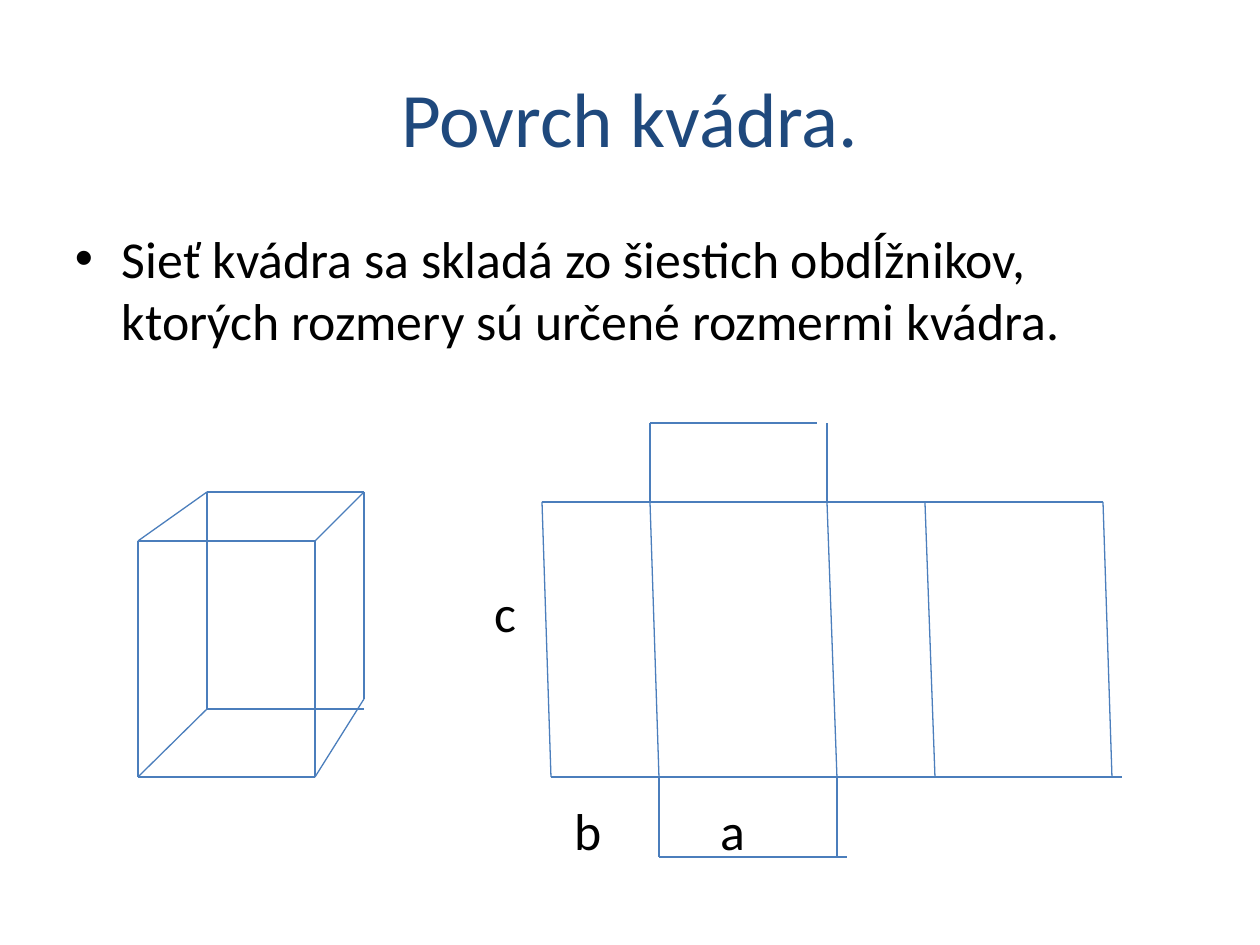
"""Build a slide on the surface of a cuboid, with the solid and its net."""
from itertools import pairwise
from pptx import Presentation
from pptx import util as u
from pptx.dml.color import RGBColor
from pptx.enum import shapes, text
from pptx.oxml.ns import qn
from lxml import etree

NAVY = RGBColor(0x1F, 0x49, 0x7D)
BLUE = RGBColor(0x4B, 0x7E, 0xBC)
BLACK = RGBColor(0, 0, 0)
FONT = "Calibri"
SIZE = 29.6

TITLE = "Povrch kvádra."
BODY = ("Sieť kvádra sa skladá zo šiestich obdĺžnikov, "
        "ktorých rozmery sú určené rozmermi kvádra.")
LABELS = [("c", 495, 581), ("b", 575, 799), ("a", 721, 799)]

SOLID = [
    [(138, 777), (315, 777), (315, 541), (138, 541), (138, 777)],
    [(138, 541), (207, 492), (364, 492), (315, 541)],
    [(364, 492), (364, 699), (315, 777)],
    [(207, 492), (207, 709), (138, 777)],
    [(207, 709), (364, 709)],
]
TOPS = [542, 650, 827, 925, 1103]
FEET = [551, 659, 837, 935, 1112]
HIGH, LOW = 502, 777
FLAPS = [
    [(650, HIGH), (650, 423), (817, 423)],
    [(827, HIGH), (827, 423)],
    [(659, LOW), (659, 857), (847, 857)],
    [(837, LOW), (837, 857)],
]


def px(n):
    return u.Emu(round(n * 914400 / 126))


def write(slide, words, box, size, color, pad=0):
    area = slide.shapes.add_textbox(*map(px, box))
    frame = area.text_frame
    frame.word_wrap = True
    frame.margin_left = frame.margin_right = px(2 * pad)
    frame.margin_top = frame.margin_bottom = px(pad)
    para = frame.paragraphs[0]
    run = para.add_run()
    run.text = words
    run.font.name = FONT
    run.font.size = u.Pt(size)
    run.font.color.rgb = color
    return frame, para


def bullet(para, dent):
    props = para._p.get_or_add_pPr()
    props.set("marL", str(px(dent)))
    props.set("indent", str(-px(dent)))
    etree.SubElement(props, qn("a:buFont")).set("typeface", "Arial")
    etree.SubElement(props, qn("a:buChar")).set("char", "•")


def draw(slide, points):
    for start, end in pairwise(points):
        line = slide.shapes.add_connector(
            shapes.MSO_CONNECTOR.STRAIGHT, *map(px, start + end))
        line.line.color.rgb = BLUE
        line.line.width = u.Pt(0.75)
        etree.SubElement(line._element.spPr, qn("a:effectLst"))


def main():
    deck = Presentation()
    deck.slide_width, deck.slide_height = px(1260), px(945)
    slide = deck.slides.add_slide(deck.slide_layouts[6])

    frame, para = write(slide, TITLE, (63, 38, 1134, 158), 44, NAVY, 6)
    frame.vertical_anchor = text.MSO_ANCHOR.MIDDLE
    para.alignment = text.PP_ALIGN.CENTER
    frame, para = write(slide, BODY, (63, 221, 1134, 140), SIZE, BLACK, 6)
    bullet(para, 47)
    for word, left, top in LABELS:
        write(slide, word, (left, top, 40, 63), SIZE, BLACK)

    rows = [[(x, HIGH) for x in TOPS], [(x, LOW) for x in FEET + [1122]]]
    sides = [[(a, HIGH), (b, LOW)] for a, b in zip(TOPS, FEET)]
    for points in SOLID + rows + sides + FLAPS:
        draw(slide, points)
    deck.save("out.pptx")


if __name__ == "__main__":
    main()
